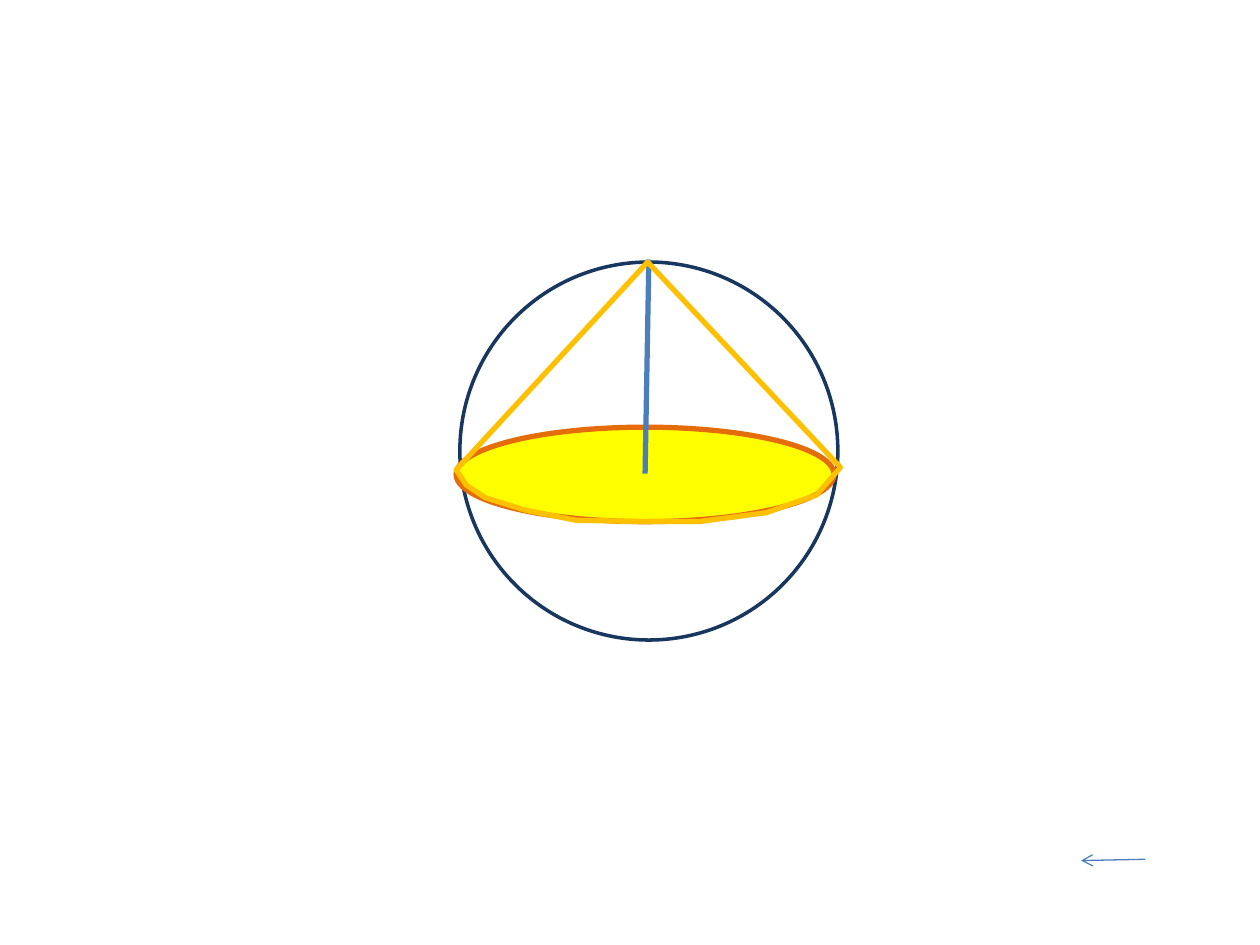
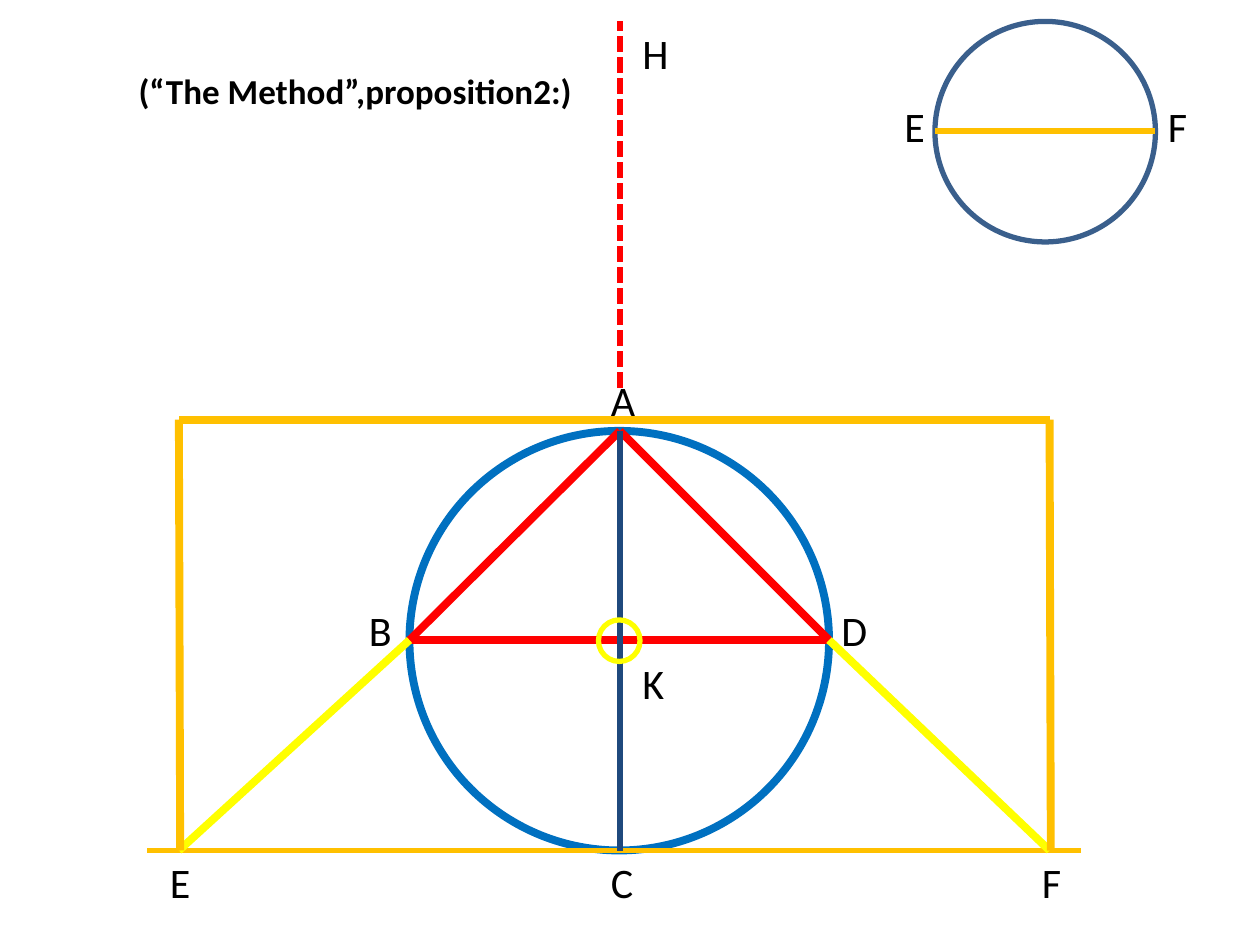
from dataclasses import dataclass
from typing import Optional

from lxml.etree import SubElement
from pptx import Presentation
from pptx.dml.color import RGBColor
from pptx.enum.dml import MSO_LINE
from pptx.enum.shapes import MSO_CONNECTOR, MSO_SHAPE
from pptx.enum.text import MSO_ANCHOR, MSO_AUTO_SIZE, PP_ALIGN
from pptx.oxml.ns import qn
from pptx.slide import Slide
from pptx.util import Inches, Pt

Point = tuple[float, float]


@dataclass(frozen=True)
class Theme:
    font: str = "Calibri"
    title_size: int = 20
    label_size: int = 24
    thin: float = 0.75
    outline: float = 2
    medium: float = 3
    thick: float = 4.5
    black: str = "000000"
    navy: str = "17375E"
    axis: str = "1F497D"
    steel: str = "3A5F8C"
    accent: str = "4B7EBC"
    blue: str = "0070C0"
    red: str = "FF0000"
    orange: str = "E46C0A"
    gold: str = "FFC000"
    yellow: str = "FFFF00"


THEME = Theme()


@dataclass(frozen=True)
class Ellipse:
    left: float
    top: float
    width: float
    height: float
    color: str
    weight: float
    fill: Optional[str] = None


@dataclass(frozen=True)
class Segment:
    start: Point
    end: Point
    color: str
    weight: float
    dashed: bool = False
    arrow: bool = False


@dataclass(frozen=True)
class Label:
    text: str
    left: float
    top: float
    width: float


def rgb(color: str) -> RGBColor:
    return RGBColor.from_string(color)


def style_line(shape, color: str, weight: float) -> None:
    shape.line.color.rgb = rgb(color)
    shape.line.width = Pt(weight)


def draw_ellipse(slide: Slide, ellipse: Ellipse) -> None:
    shape = slide.shapes.add_shape(
        MSO_SHAPE.OVAL, Inches(ellipse.left), Inches(ellipse.top),
        Inches(ellipse.width), Inches(ellipse.height))
    shape.shadow.inherit = False
    style_line(shape, ellipse.color, ellipse.weight)
    if ellipse.fill:
        shape.fill.solid()
        shape.fill.fore_color.rgb = rgb(ellipse.fill)
    else:
        shape.fill.background()


def draw_segment(slide: Slide, segment: Segment) -> None:
    connector = slide.shapes.add_connector(
        MSO_CONNECTOR.STRAIGHT,
        *(Inches(value) for value in segment.start + segment.end))
    style_line(connector, segment.color, segment.weight)
    if segment.dashed:
        connector.line.dash_style = MSO_LINE.SQUARE_DOT
    properties = connector._element.spPr
    if segment.arrow:
        SubElement(properties.find(qn("a:ln")), qn("a:tailEnd"), type="arrow")
    SubElement(properties, qn("a:effectLst"))


def draw_outline(slide: Slide, points: list[Point], color: str,
                 weight: float, close: bool) -> None:
    corners = [(Inches(x), Inches(y)) for x, y in points]
    builder = slide.shapes.build_freeform(*corners[0])
    builder.add_line_segments(corners[1:], close=close)
    shape = builder.convert_to_shape()
    shape.shadow.inherit = False
    shape.fill.background()
    style_line(shape, color, weight)


def draw_label(slide: Slide, label: Label) -> None:
    box = slide.shapes.add_textbox(Inches(label.left), Inches(label.top),
                                   Inches(label.width), Inches(0.5))
    box.text_frame.word_wrap = False
    paragraph = box.text_frame.paragraphs[0]
    paragraph.text = label.text
    paragraph.font.name = THEME.font
    paragraph.font.size = Pt(THEME.label_size)
    paragraph.font.color.rgb = rgb(THEME.black)


def set_title(slide: Slide, text: str) -> None:
    title = slide.shapes.title
    title.left, title.top = Inches(1), Inches(0.5)
    title.width, title.height = Inches(3.67), Inches(0.44)
    frame = title.text_frame
    frame.text = text
    frame.word_wrap = False
    frame.auto_size = MSO_AUTO_SIZE.NONE
    frame.vertical_anchor = MSO_ANCHOR.TOP
    paragraph = frame.paragraphs[0]
    paragraph.alignment = PP_ALIGN.LEFT
    paragraph.font.name = THEME.font
    paragraph.font.size = Pt(THEME.title_size)
    paragraph.font.bold = True
    paragraph.font.color.rgb = rgb(THEME.black)


def build_cone_in_sphere(slide: Slide) -> None:
    t = THEME
    draw_segment(slide, Segment((9.09, 6.82), (8.58, 6.83), t.accent, t.thin, arrow=True))
    # Sphere and the cone's base
    draw_ellipse(slide, Ellipse(3.65, 2.08, 3, 3, t.navy, t.outline))
    draw_ellipse(slide, Ellipse(3.62, 3.39, 3, 0.75, t.orange, t.medium, t.yellow))
    # Height, then the cone's outline
    draw_outline(slide, [(5.15, 2.06), (5.12, 3.76)], t.accent, t.medium, close=False)
    cone = [(3.62, 3.73), (5.14, 2.08), (6.67, 3.71), (6.48, 3.93),
            (6.08, 4.07), (5.55, 4.14), (5.1, 4.14), (4.57, 4.13),
            (4.17, 4.05), (3.85, 3.95), (3.7, 3.85)]
    draw_outline(slide, cone, t.gold, t.medium, close=True)


def build_proposition(slide: Slide) -> None:
    t = THEME
    set_title(slide, "(“The Method”,proposition2:)")

    # Named points of the construction
    left, middle, right = 3.25, 4.92, 6.58
    top, center, base = 3.42, 5.08, 6.75
    a, b, c, d = (middle, top), (left, center), (middle, base), (right, center)
    e, f = (1.42, base), (8.33, base)
    frame_top = 3.33
    frame_left, frame_right = (e[0], frame_top), (f[0], frame_top)

    # Great circle, triangle ABD and the larger cone AEF
    draw_ellipse(slide, Ellipse(left, top, right - left, base - top, t.blue, t.thick))
    for start, end in ((a, d), (a, b), (d, b)):
        draw_segment(slide, Segment(start, end, t.red, t.thick))
    draw_segment(slide, Segment((8.58, base), (1.17, base), t.gold, t.medium))
    for start, end in ((b, e), (d, f)):
        draw_segment(slide, Segment(start, end, t.yellow, t.thick))

    # Circle with diameter EF
    draw_ellipse(slide, Ellipse(7.42, 0.17, 1.75, 1.75, t.steel, t.medium))
    draw_segment(slide, Segment((7.42, 1.04), (9.17, 1.04), t.gold, t.medium))

    # Cylinder around the cone
    for start, end in ((frame_right, frame_left),
                       ((f[0] + 0.01, base), frame_right),
                       ((e[0] + 0.01, base), frame_left)):
        draw_segment(slide, Segment(start, end, t.gold, t.thick))

    # Axis AC, its extension to H and the center K
    draw_segment(slide, Segment(c, a, t.axis, t.medium))
    draw_segment(slide, Segment((middle, 3.08), (middle, 0.17), t.red, t.medium, dashed=True))
    draw_ellipse(slide, Ellipse(4.75, 4.92, 0.33, 0.33, t.yellow, t.medium))

    for label in (Label("A", 4.75, 2.92, 0.4), Label("C", 4.75, base, 0.38),
                  Label("B", 2.83, 4.75, 0.38), Label("D", right, 4.75, 0.41),
                  Label("E", 1.25, base, 0.37), Label("F", 8.17, base, 0.36),
                  Label("E", 7.08, 0.75, 0.37), Label("F", 9.17, 0.75, 0.36),
                  Label("H", 5, 0.17, 0.41), Label("K", 5, 5.17, 0.41)):
        draw_label(slide, label)


def main() -> None:
    deck = Presentation()
    deck.slide_width, deck.slide_height = Inches(10), Inches(7.5)
    title_only, blank = deck.slide_layouts[5], deck.slide_layouts[6]
    build_cone_in_sphere(deck.slides.add_slide(blank))
    build_proposition(deck.slides.add_slide(title_only))
    deck.save("out.pptx")


if __name__ == "__main__":
    main()
